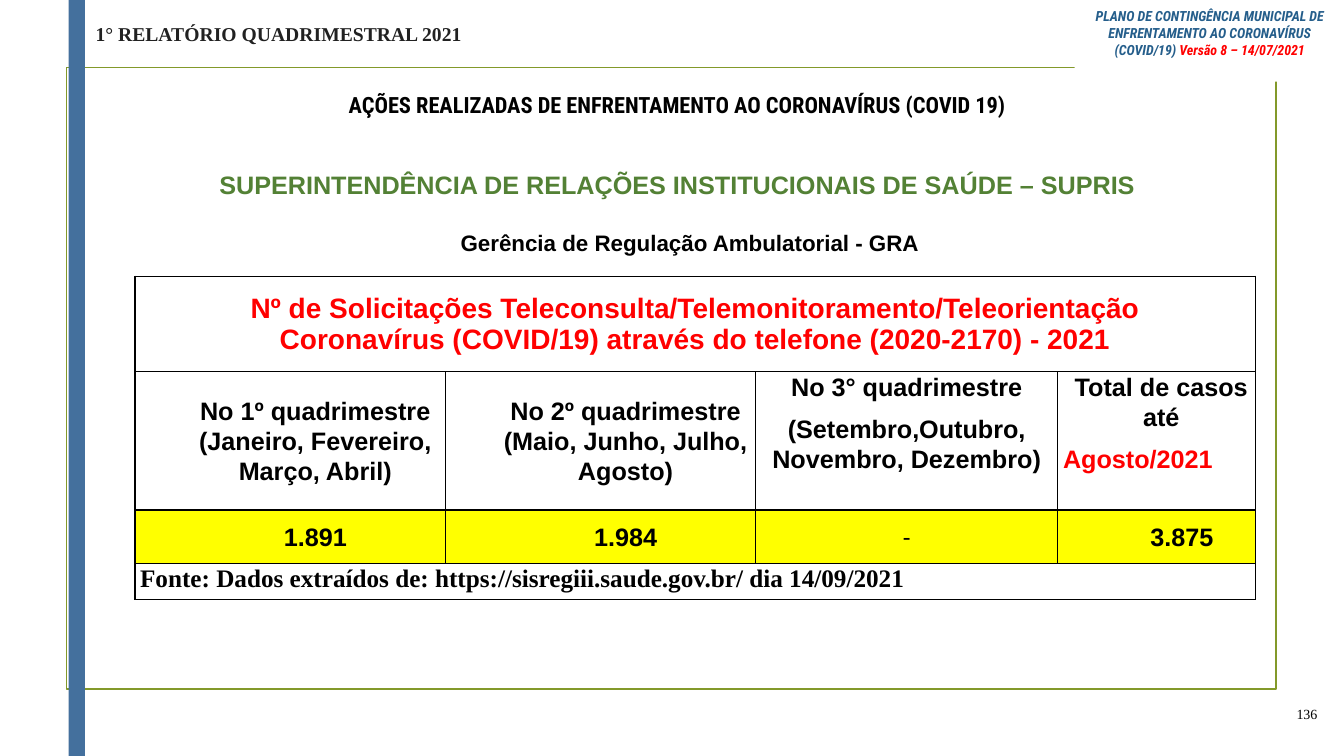
"""Build the slide on remote-care requests per four-month period."""
from lxml import etree
from pptx import Presentation
from pptx.dml.color import RGBColor
from pptx.enum import shapes, text
from pptx.oxml.ns import qn
from pptx.util import Cm, Pt

HUE = {"black": "000000", "white": "FFFFFF", "red": "FF0000", "yellow": "FFFF00",
       "green": "538135", "olive": "83992A", "bar": "44709D", "navy": "255E8B",
       "gray": "212121"}
SANS, SERIF, SLIM = "Arial", "Times New Roman", "Roboto Condensed"
MID, TOP = text.MSO_ANCHOR.MIDDLE, text.MSO_ANCHOR.TOP
LEFT, MIDST, RIGHT = text.PP_ALIGN.LEFT, text.PP_ALIGN.CENTER, text.PP_ALIGN.RIGHT

TITLE = [("PLANO DE CONTINGÊNCIA MUNICIPAL DE ENFRENTAMENTO AO CORONAVÍRUS (COVID/19) ", {}),
         ("Versão 8 – 14/07/2021", {"color": "red"})]
REPORT = "1° RELATÓRIO QUADRIMESTRAL 2021"
HEAD = "AÇÕES REALIZADAS DE ENFRENTAMENTO AO CORONAVÍRUS (COVID 19)"
UNITS = [("SUPERINTENDÊNCIA DE RELAÇÕES INSTITUCIONAIS DE SAÚDE – SUPRIS",
          {"size": 18, "color": "green"}),
         ("Gerência de Regulação Ambulatorial - GRA", {"before": 20, "indent": 0.63})]
PAGE = "136"

IN = {"indent": 1.27}
GAP = {"after": 8}
BIG = {"size": 20, "color": "red", "line": 1}
ROWS = [
    [(MID, [("Nº de Solicitações Teleconsulta/Telemonitoramento/Teleorientação", BIG),
            ("Coronavírus (COVID/19) através do telefone (2020-2170) - 2021", BIG)])],
    [(MID, [("No 1º quadrimestre", IN), ("(Janeiro, Fevereiro, Março, Abril)", IN)]),
     (MID, [("No 2º quadrimestre", IN), ("(Maio, Junho, Julho, Agosto)", IN)]),
     (TOP, [("No 3° quadrimestre", GAP), ("(Setembro,Outubro, Novembro, Dezembro)", GAP)]),
     (TOP, [("Total de casos até", {"indent": 0.23, "after": 8}),
            ("Agosto/2021", {"align": LEFT, "color": "red"})])],
    [(MID, [("1.891", IN)]), (MID, [("1.984", IN)]),
     (MID, [("-", {"face": "Calibri", "bold": False})]), (MID, [("3.875", IN)])],
    [(TOP, [("Fonte: Dados extraídos de: https://sisregiii.saude.gov.br/ dia 14/09/2021",
             {"face": SERIF, "align": LEFT})])],
]
WIDE = [7.82, 7.82, 7.62, 4.98]
HIGH = [2.41, 3.48, 1.35, 0.91]
SUM = 2


def rgb(name):
    return RGBColor.from_string(HUE[name])


def write(frame, paras, **base):
    """Fill a text frame; each paragraph may override the base format."""
    for i, (words, own) in enumerate(paras):
        para = frame.paragraphs[0] if i == 0 else frame.add_paragraph()
        fmt = {**base, **own}
        para.alignment = fmt.get("align", MIDST)
        para.line_spacing = fmt.get("line", 1.0)
        para.space_before = Pt(fmt.get("before", 0))
        para.space_after = Pt(fmt.get("after", 0))
        if "indent" in fmt:
            props = para._p.get_or_add_pPr()
            props.set("marL", str(Cm(fmt["indent"])))
            props.set("indent", "0")
        for part, more in [(words, {})] if isinstance(words, str) else words:
            look = {**fmt, **more}
            run = para.add_run()
            run.text = part
            font = run.font
            font.name, font.size = look.get("face", SANS), Pt(look["size"])
            font.bold, font.italic = look.get("bold", True), look.get("italic", False)
            font.color.rgb = rgb(look.get("color", "black"))


def block(slide, box, fill=None, line=None):
    """Add a flat rectangle."""
    shape = slide.shapes.add_shape(shapes.MSO_SHAPE.RECTANGLE, *map(Cm, box))
    shape.shadow.inherit = False
    if fill:
        shape.fill.solid()
        shape.fill.fore_color.rgb = rgb(fill)
    else:
        shape.fill.background()
    if line:
        shape.line.color.rgb = rgb(line)
        shape.line.width = Pt(1.25)
    else:
        shape.line.fill.background()
    return shape


def label(slide, box, words, wrap=True, anchor=TOP, **fmt):
    """Add a text box of one paragraph."""
    frame = slide.shapes.add_textbox(*map(Cm, box)).text_frame
    frame.word_wrap, frame.vertical_anchor = wrap, anchor
    write(frame, [(words, {})], **fmt)


def border(cell):
    """Rule all four sides of a cell."""
    props = cell._tc.get_or_add_tcPr()
    for side in "LRTB":
        line = etree.SubElement(props, qn("a:ln" + side), w=str(Pt(1)))
        fill = etree.SubElement(line, qn("a:solidFill"))
        etree.SubElement(fill, qn("a:srgbClr"), val=HUE["black"])


def grid(slide):
    """Add the table of requests."""
    area = map(Cm, (3.4, 6.96, sum(WIDE), sum(HIGH)))
    table = slide.shapes.add_table(len(HIGH), len(WIDE), *area).table
    table.first_row = table.horz_banding = False
    for col, wide in zip(table.columns, WIDE):
        col.width = Cm(wide)
    for r, (row, high) in enumerate(zip(ROWS, HIGH)):
        table.rows[r].height = Cm(high)
        for cell in table.rows[r].cells:
            border(cell)
            cell.fill.solid()
            cell.fill.fore_color.rgb = rgb("yellow" if r == SUM else "white")
            cell.margin_left = cell.margin_right = Cm(0.13)
            cell.margin_top = cell.margin_bottom = 0
        if len(row) == 1:
            table.cell(r, 0).merge(table.cell(r, len(WIDE) - 1))
        for c, (anchor, paras) in enumerate(row):
            cell = table.cell(r, c)
            cell.vertical_anchor = anchor
            write(cell.text_frame, paras, size=18, line=1.07)


def main():
    deck = Presentation()
    deck.slide_width, deck.slide_height = Cm(33.87), Cm(19.05)
    slide = deck.slides.add_slide(deck.slide_layouts[5])
    block(slide, (1.68, 1.7, 30.48, 15.67), line="olive")
    block(slide, (1.73, 0, 0.41, 19.05), fill="bar")
    label(slide, (31.29, 17.48, 2.16, 1.02), PAGE, anchor=MID,
          size=10, face=SERIF, bold=False, align=RIGHT)
    label(slide, (2.16, 2.18, 29.82, 0.94), HEAD, size=16, face=SLIM)
    panel = block(slide, (2.16, 4.09, 29.82, 9.09), fill="white").text_frame
    panel.word_wrap, panel.vertical_anchor = True, TOP
    write(panel, UNITS, size=16, line=1.07)
    grid(slide)
    label(slide, (2.16, 0.43, 10.16, 0.86), REPORT, wrap=False,
          size=14, face=SERIF, color="gray", align=LEFT)

    title = slide.shapes.title
    title.left, title.top, title.width, title.height = map(Cm, (27.08, 0, 6.81, 2.06))
    title.fill.solid()
    title.fill.fore_color.rgb = rgb("white")
    frame = title.text_frame
    frame.auto_size, frame.word_wrap = text.MSO_AUTO_SIZE.NONE, True
    frame.vertical_anchor, frame.margin_top = TOP, Cm(0.2)
    write(frame, [(TITLE, {})], size=10, face=SLIM, color="navy", italic=True)
    slide.shapes.element.append(title.element)
    deck.save("out.pptx")


if __name__ == "__main__":
    main()
